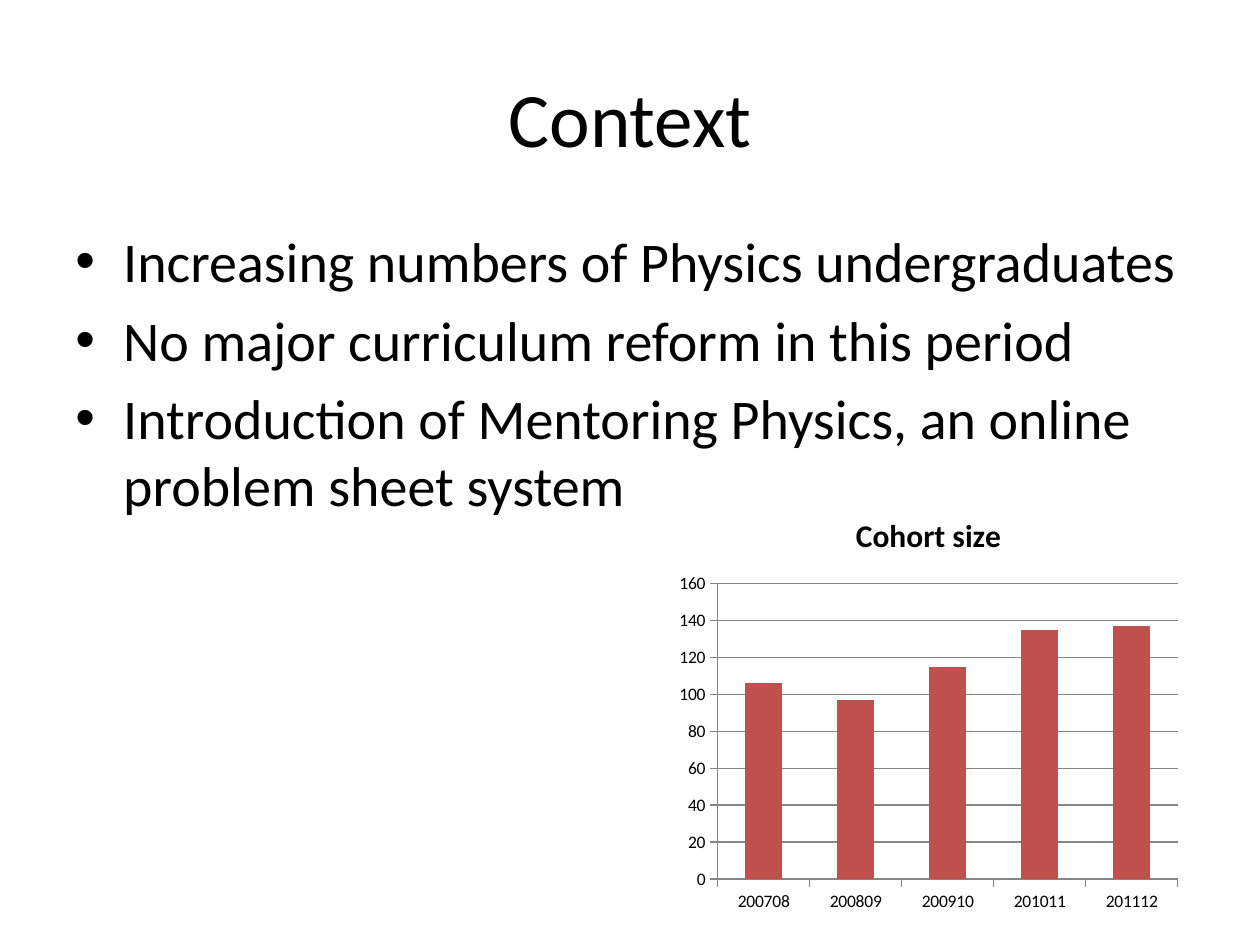
from lxml.etree import SubElement
from pptx import Presentation
from pptx.chart.data import CategoryChartData as ChartData
from pptx.dml.color import RGBColor
from pptx.enum.chart import XL_CHART_TYPE as Kind, XL_TICK_MARK as Tick
from pptx.enum.text import MSO_ANCHOR as Anchor, PP_ALIGN as Align
from pptx.oxml.ns import qn
from pptx.util import Inches, Pt

BLACK = RGBColor(0x00, 0x00, 0x00)
GRAY = RGBColor(0x86, 0x86, 0x86)
RED = RGBColor(0xC0, 0x50, 0x4D)


class Deck:
    face = "Calibri"

    def __init__(self, wide, high):
        self.show = Presentation()
        self.show.slide_width = Inches(wide)
        self.show.slide_height = Inches(high)
        self.slide = self.show.slides.add_slide(self.show.slide_layouts[6])

    def style(self, font, size, bold=False):
        font.name = self.face
        font.size = Pt(size)
        font.bold = bold
        font.color.rgb = BLACK

    def frame(self, box, anchor):
        frame = self.slide.shapes.add_textbox(*map(Inches, box)).text_frame
        frame.word_wrap = True
        frame.vertical_anchor = anchor
        return frame

    def title(self, text, box):
        para = self.frame(box, Anchor.MIDDLE).paragraphs[0]
        para.text = text
        para.alignment = Align.CENTER
        self.style(para.font, 44)

    def bullets(self, items, box, size=32):
        frame = self.frame(box, Anchor.TOP)
        frame.text = "\n".join(items)
        for para in frame.paragraphs:
            self.style(para.font, size)
            para.space_before = Pt(0.2 * size)
            # Hanging indent and bullet mark
            props = para._p.get_or_add_pPr()
            props.set("marL", str(Inches(0.38)))
            props.set("indent", str(Inches(-0.38)))
            SubElement(props, qn("a:buFont"), typeface="Arial")
            SubElement(props, qn("a:buChar"), char="•")

    def columns(self, title, cats, vals, box):
        data = ChartData()
        data.categories = cats
        data.add_series("Series 1", vals)
        chart = self.slide.shapes.add_chart(
            Kind.COLUMN_CLUSTERED, *map(Inches, box), data).chart
        self.style(chart.font, 10)
        chart.has_legend = False
        chart.has_title = True
        head = chart.chart_title.text_frame
        head.text = title
        self.style(head.paragraphs[0].font, 18, True)

        # Bars
        plot = chart.plots[0]
        plot.gap_width = 150
        plot.vary_by_categories = False
        fill = plot.series[0].format.fill
        fill.solid()
        fill.fore_color.rgb = RED

        # Axes and grid
        scale = chart.value_axis
        scale.minimum_scale, scale.maximum_scale = 0, 160
        scale.major_unit = 20
        scale.has_major_gridlines = True
        for axis in (scale, chart.category_axis):
            axis.major_tick_mark = Tick.OUTSIDE
            axis.minor_tick_mark = Tick.NONE
        for part in (scale, chart.category_axis, scale.major_gridlines):
            part.format.line.color.rgb = GRAY
            part.format.line.width = Pt(0.75)


def main():
    deck = Deck(10, 7.5)

    # Heading and points
    deck.title("Context", (0.5, 0.3, 9, 1.25))
    deck.bullets([
        "Increasing numbers of Physics undergraduates",
        "No major curriculum reform in this period",
        "Introduction of Mentoring Physics, an online problem sheet system",
    ], (0.5, 1.75, 9, 4.95))

    # Cohort chart
    deck.columns("Cohort size",
                 ["200708", "200809", "200910", "201011", "201112"],
                 [106, 97, 115, 135, 137], (5.31, 3.91, 4.12, 3.39))

    deck.show.save("out.pptx")


if __name__ == "__main__":
    main()
